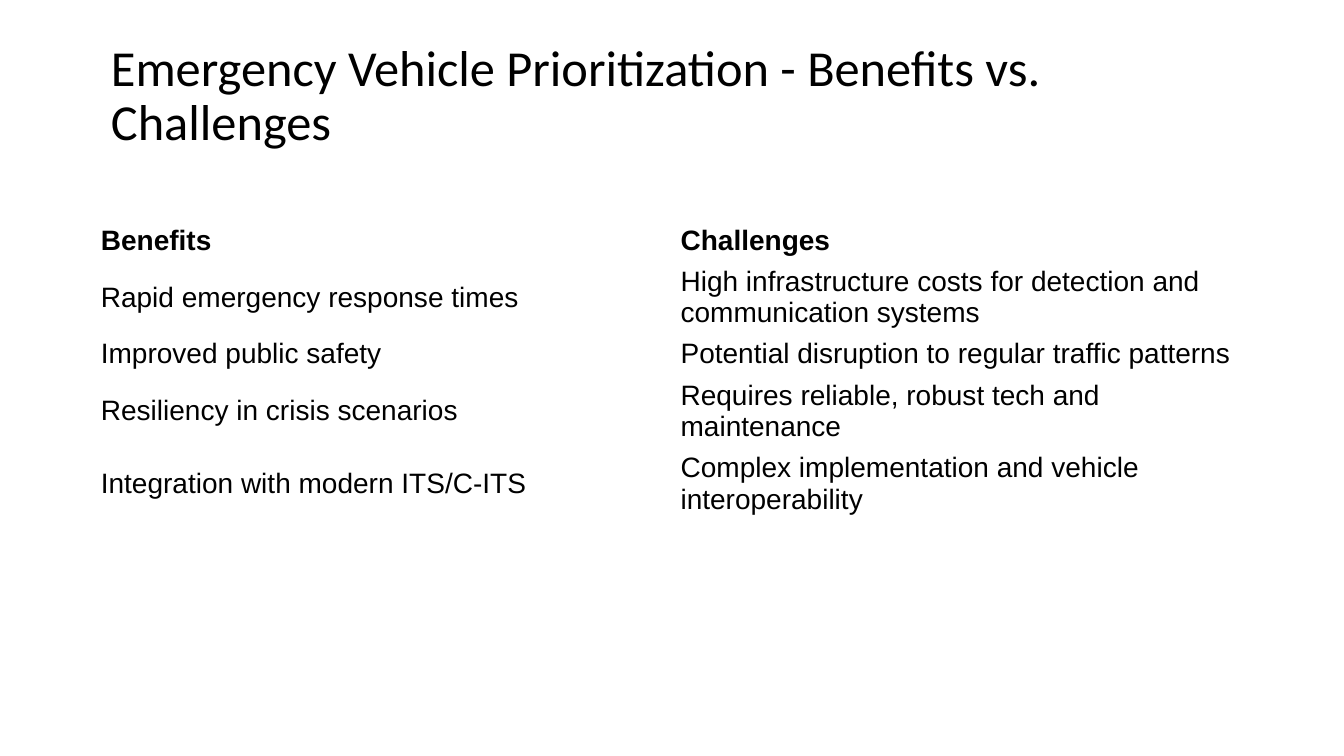
import pptx
import pptx.util
import pptx.dml.color
import pptx.enum.text

Inches = pptx.util.Inches
COLORS = {"text": "000000"}
BENEFITS_AND_CHALLENGES = [
    ("Benefits", "Challenges"),
    ("Rapid emergency response times",
     "High infrastructure costs for detection and communication systems"),
    ("Improved public safety", "Potential disruption to regular traffic patterns"),
    ("Resiliency in crisis scenarios", "Requires reliable, robust tech and maintenance"),
    ("Integration with modern ITS/C-ITS",
     "Complex implementation and vehicle interoperability"),
]
ROW_HEIGHTS = [0.41, 0.72, 0.41, 0.72, 0.72]


class SlideBuilder:
    """Holds the text style and the current slide."""

    def __init__(self, page):
        self.page = page
        self.title_font = "Calibri"
        self.body_font = "Arial"

    def add_text(self, para, text, font, size, bold=False):
        para.alignment = pptx.enum.text.PP_ALIGN.LEFT
        span = para.add_run()
        span.text = text
        span.font.name = font
        span.font.size = pptx.util.Pt(size)
        span.font.bold = bold
        span.font.color.rgb = pptx.dml.color.RGBColor.from_string(COLORS["text"])

    def add_title(self, text, left, top, width, height):
        box = self.page.shapes.title
        box.left, box.top = Inches(left), Inches(top)
        box.width, box.height = Inches(width), Inches(height)
        frame = box.text_frame
        frame.word_wrap = True
        frame.auto_size = pptx.enum.text.MSO_AUTO_SIZE.NONE
        frame.vertical_anchor = pptx.enum.text.MSO_ANCHOR.MIDDLE
        para = frame.paragraphs[0]
        para.line_spacing = 0.9
        self.add_text(para, text, self.title_font, 36)

    def add_table(self, rows, heights, left, top, width):
        columns = len(rows[0])
        table = self.page.shapes.add_table(
            len(rows), columns, Inches(left), Inches(top),
            Inches(width), Inches(sum(heights))).table
        table.first_row = False
        table.horz_banding = False
        for column in table.columns:
            column.width = Inches(width / columns)
        for row_index, (texts, height) in enumerate(zip(rows, heights)):
            table.rows[row_index].height = Inches(height)
            for column_index, text in enumerate(texts):
                cell = table.cell(row_index, column_index)
                cell.fill.background()
                cell.vertical_anchor = pptx.enum.text.MSO_ANCHOR.MIDDLE
                cell.margin_left = cell.margin_right = Inches(0.08)
                cell.margin_top = cell.margin_bottom = Inches(0.04)
                self.add_text(cell.text_frame.paragraphs[0], text,
                              self.body_font, 20, bold=row_index == 0)


def main():
    deck = pptx.Presentation()
    deck.slide_width, deck.slide_height = Inches(13.33), Inches(7.5)
    builder = SlideBuilder(deck.slides.add_slide(deck.slide_layouts[5]))
    builder.add_title("Emergency Vehicle Prioritization - Benefits vs. Challenges",
                      1, 0.24, 11.5, 1.45)
    builder.add_table(BENEFITS_AND_CHALLENGES, ROW_HEIGHTS, 0.92, 2.18, 11.5)
    deck.save("out.pptx")


if __name__ == "__main__":
    main()
